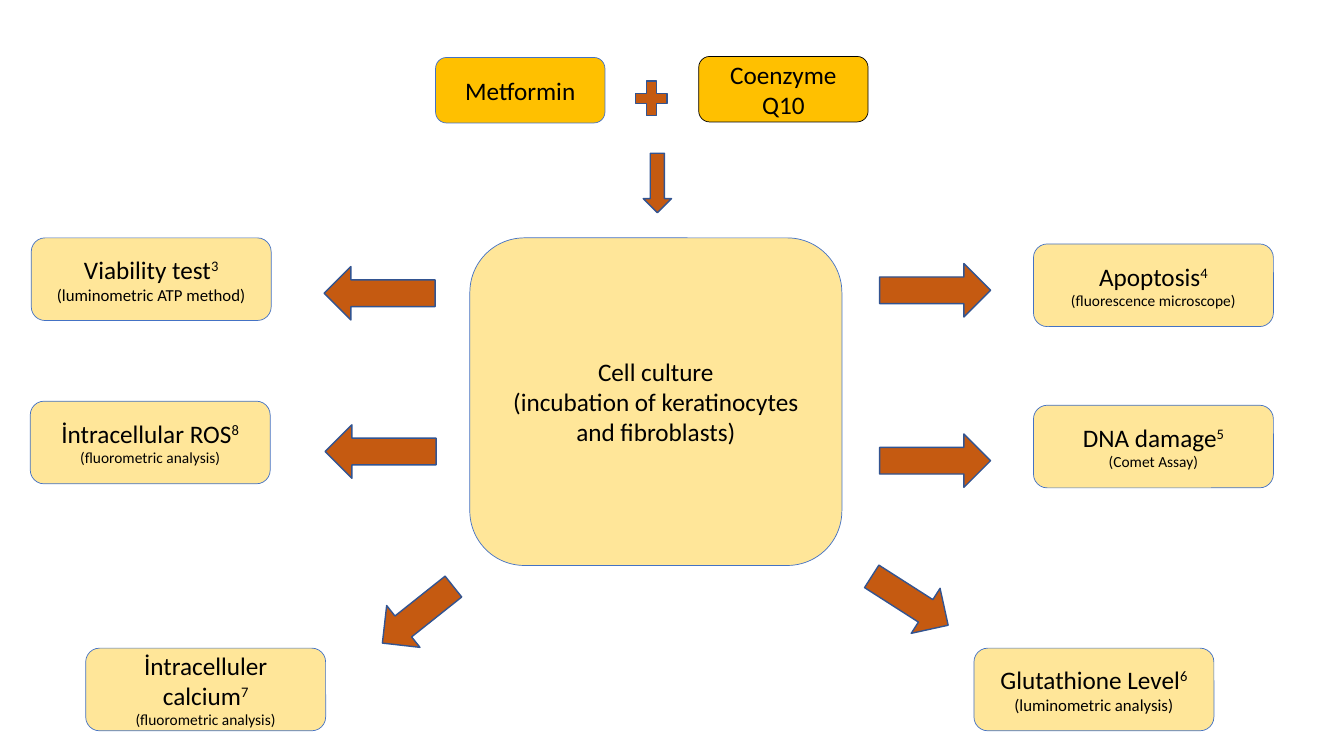
from dataclasses import dataclass
from pptx import Presentation
from pptx import util as u
from pptx.dml.color import RGBColor
from pptx.enum import shapes, text

KIND = shapes.MSO_SHAPE


@dataclass(frozen=True)
class Theme:
    font: str = "Calibri"
    ink: str = "000000"
    drug: str = "FFC000"
    pale: str = "FFE699"
    edge: str = "4472C4"
    arrow: str = "C55A11"
    rim: str = "325491"
    head: int = 18
    note: int = 12
    small: int = 11
    thin: float = 0.5
    bold: float = 1


def px(n):
    """One px is a hundredth of an inch."""
    return u.Inches(n / 100)


class Page:
    def __init__(self, deck, theme):
        self.theme = theme
        self.slide = deck.slides.add_slide(deck.slide_layouts[6])

    def shape(self, kind, at, fill, line, width, turn=0):
        item = self.slide.shapes.add_shape(kind, *map(px, at))
        item.shadow.inherit = False
        item.fill.solid()
        item.fill.fore_color.rgb = RGBColor.from_string(fill)
        item.line.color.rgb = RGBColor.from_string(line)
        item.line.width = u.Pt(width)
        item.rotation = turn
        return item

    def mark(self, kind, at, turn=0):
        t = self.theme
        self.shape(kind, at, t.arrow, t.rim, t.bold, turn)

    def style(self, run, size):
        run.font.name = self.theme.font
        run.font.size = u.Pt(size)
        run.font.color.rgb = RGBColor.from_string(self.theme.ink)

    def box(self, at, words, fill=None, line=None, sizes=None):
        t = self.theme
        item = self.shape(KIND.ROUNDED_RECTANGLE, at, fill or t.pale,
                          line or t.edge, t.thin)
        frame = item.text_frame
        frame.word_wrap = True
        frame.vertical_anchor = text.MSO_ANCHOR.MIDDLE
        frame.text = words
        for i, para in enumerate(frame.paragraphs):
            para.alignment = text.PP_ALIGN.CENTER
            for run in para.runs:
                self.style(run, sizes[i] if sizes else t.head)
        return item

    def test(self, at, name, ref, method, size):
        """A result box: name with a raised reference, then its method."""
        t = self.theme
        item = self.box(at, f"{name}\n{method}", sizes=(t.head, size))
        run = item.text_frame.paragraphs[0].add_run()
        run.text = ref
        self.style(run, t.head)
        run.font._element.set("baseline", "30000")


def main():
    deck = Presentation()
    deck.slide_width, deck.slide_height = px(1333), px(750)
    t = Theme()
    page = Page(deck, t)

    # Drugs added to the culture
    page.box((432, 57, 168, 65), "Metformin", t.drug)
    page.box((693, 56, 168, 65), "Coenzyme Q10", t.drug, t.ink)
    page.mark(KIND.MATH_PLUS, (625, 74, 42, 47))
    page.mark(KIND.DOWN_ARROW, (638, 152, 28, 59))

    # Cell culture
    page.box((466, 236, 369, 325),
             "Cell culture\n(incubation of keratinocytes and fibroblasts)")

    # Tests around the culture
    tests = [
        (31, 236, "Viability test", "3", "(luminometric ATP method)", t.note),
        (30, 398, "İntracellular ROS", "8", "(fluorometric analysis)", t.small),
        (85, 643, "İntracelluler calcium", "7", "(fluorometric analysis)", t.small),
        (1025, 242, "Apoptosis", "4", "(fluorescence microscope)", t.small),
        (1025, 402, "DNA damage", "5", "(Comet Assay)", t.small),
        (966, 643, "Glutathione Level", "6", "(luminometric analysis)", t.note),
    ]
    for x, y, *words in tests:
        page.test((x, y, 238, 82), *words)

    # Arrows from the culture to the tests
    arrows = [
        (350, 236, 110, 90), (351, 393, 110, 90), (388, 565, 90, 51.5),
        (901, 233, 110, 270), (901, 402, 110, 270), (876, 551, 90, 302.6),
    ]
    for x, y, long, turn in arrows:
        page.mark(KIND.DOWN_ARROW, (x, y, 53, long), turn)

    deck.save("out.pptx")


if __name__ == "__main__":
    main()
